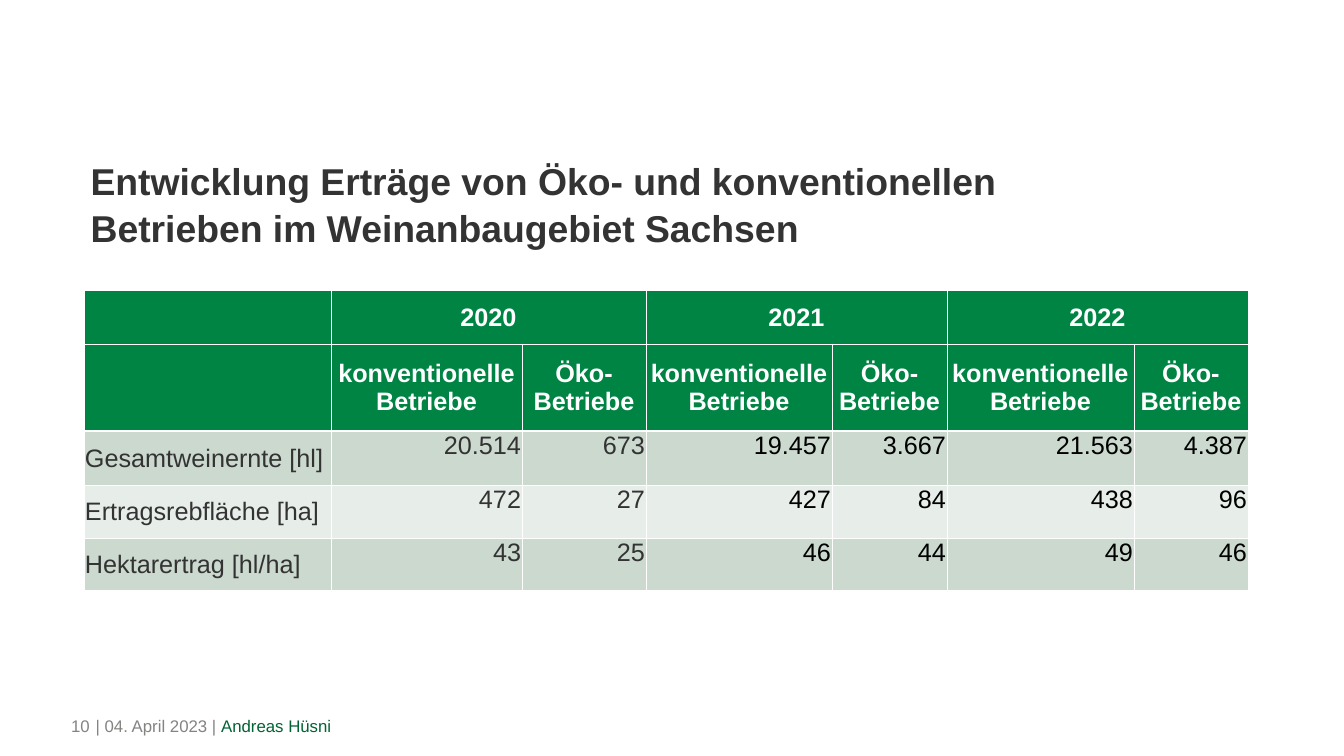
"""Build a slide with a table of wine yields in Saxony."""
from dataclasses import dataclass

from lxml.etree import SubElement
from pptx import Presentation
from pptx.dml.color import RGBColor
from pptx.enum.text import MSO_ANCHOR, PP_ALIGN
from pptx.oxml.ns import qn
from pptx.util import Pt

SCALE = 914400 / 67.2


def px(num):
    return round(num * SCALE)


@dataclass(frozen=True)
class Theme:
    font: str = "Arial"
    white: str = "FFFFFF"
    black: str = "000000"
    dark: str = "333333"
    grey: str = "828480"
    green: str = "008444"
    deep: str = "006333"
    bands: tuple = ("CBD9CF", "E7EDE9")
    title: int = 40
    body: int = 27
    foot: int = 18


class Page:
    def __init__(self, slide, theme):
        self.slide = slide
        self.theme = theme

    def style(self, run, size, color, bold=False):
        font = run.font
        font.name = self.theme.font
        font.size = Pt(size)
        font.bold = bold
        font.color.rgb = RGBColor.from_string(color)

    def text(self, box, parts, size, bold=False, align=PP_ALIGN.LEFT, space=1.0):
        frame = self.slide.shapes.add_textbox(*map(px, box)).text_frame
        frame.word_wrap = True
        para = frame.paragraphs[0]
        para.alignment = align
        para.line_spacing = space
        for words, color in parts:
            run = para.add_run()
            run.text = words
            self.style(run, size, color, bold)

    def edge(self, cell, side, width):
        line = SubElement(cell._tc.get_or_add_tcPr(), qn(f"a:ln{side}"), w=str(Pt(width)))
        fill = SubElement(line, qn("a:solidFill"))
        SubElement(fill, qn("a:srgbClr"), val=self.theme.white)

    def cell(self, cell, words, fill, color, bold, align, anchor, top, base):
        cell.margin_left = cell.margin_right = cell.margin_top = px(1)
        cell.margin_bottom = 0
        cell.vertical_anchor = anchor
        for side, width in zip("LRTB", (1, 1, top, base)):
            self.edge(cell, side, width)
        cell.fill.solid()
        cell.fill.fore_color.rgb = RGBColor.from_string(fill)
        cell.text_frame.text = words
        para = cell.text_frame.paragraphs[0]
        para.alignment = align
        for run in para.runs:
            self.style(run, self.theme.body, color, bold)

    def table(self, left, top, cols, rows, data, heads):
        theme = self.theme
        box = map(px, (left, top, sum(cols), sum(rows)))
        grid = self.slide.shapes.add_table(len(rows), len(cols), *box).table
        grid.first_row = grid.horz_banding = False
        for col, width in zip(grid.columns, cols):
            col.width = px(width)
        for row, height in zip(grid.rows, rows):
            row.height = px(height)
        for i, line in enumerate(data):
            head = i < heads
            fill = theme.green if head else theme.bands[(i - heads) % 2]
            upper = 1.5 if i == heads else 1
            lower = 1.5 if i == heads - 1 else 1
            for j, words in enumerate(line):
                color = theme.white if head else theme.dark if j < 3 else theme.black
                align = PP_ALIGN.CENTER if head else PP_ALIGN.RIGHT if j else PP_ALIGN.LEFT
                anchor = MSO_ANCHOR.TOP if j and not head else MSO_ANCHOR.MIDDLE
                self.cell(grid.cell(i, j), words, fill, color, head, align, anchor, upper, lower)
        for j in range(1, len(cols), 2):
            grid.cell(0, j).merge(grid.cell(0, j + 1))


def main():
    deck = Presentation()
    deck.slide_width, deck.slide_height = px(1344), px(756)
    theme = Theme()
    page = Page(deck.slides.add_slide(deck.slide_layouts[6]), theme)

    page.text((0, 712, 101, 44), [("10 ", theme.grey)], theme.foot, align=PP_ALIGN.RIGHT)
    page.text(
        (89, 712, 921, 44),
        [("| 04. April 2023 | ", theme.grey), ("Andreas Hüsni", theme.deep)],
        theme.foot,
    )
    title = "Entwicklung Erträge von Öko- und konventionellen Betrieben im Weinanbaugebiet Sachsen"
    page.text((84, 153, 959, 97), [(title, theme.dark)], theme.title, bold=True, space=1.05)

    data = [
        ["", "2020", "", "2021", "", "2022", ""],
        [""] + ["konventionelle Betriebe", "Öko-Betriebe"] * 3,
        ["Gesamtweinernte [hl]", "20.514", "673", "19.457", "3.667", "21.563", "4.387"],
        ["Ertragsrebfläche [ha]", "472", "27", "427", "84", "438", "96"],
        ["Hektarertrag [hl/ha]", "43", "25", "46", "44", "49", "46"],
    ]
    cols = (247, 191, 124, 186, 115, 187, 114)
    page.table(84, 290, cols, (54, 87, 54, 53, 52), data, heads=2)
    deck.save("out.pptx")


if __name__ == "__main__":
    main()
